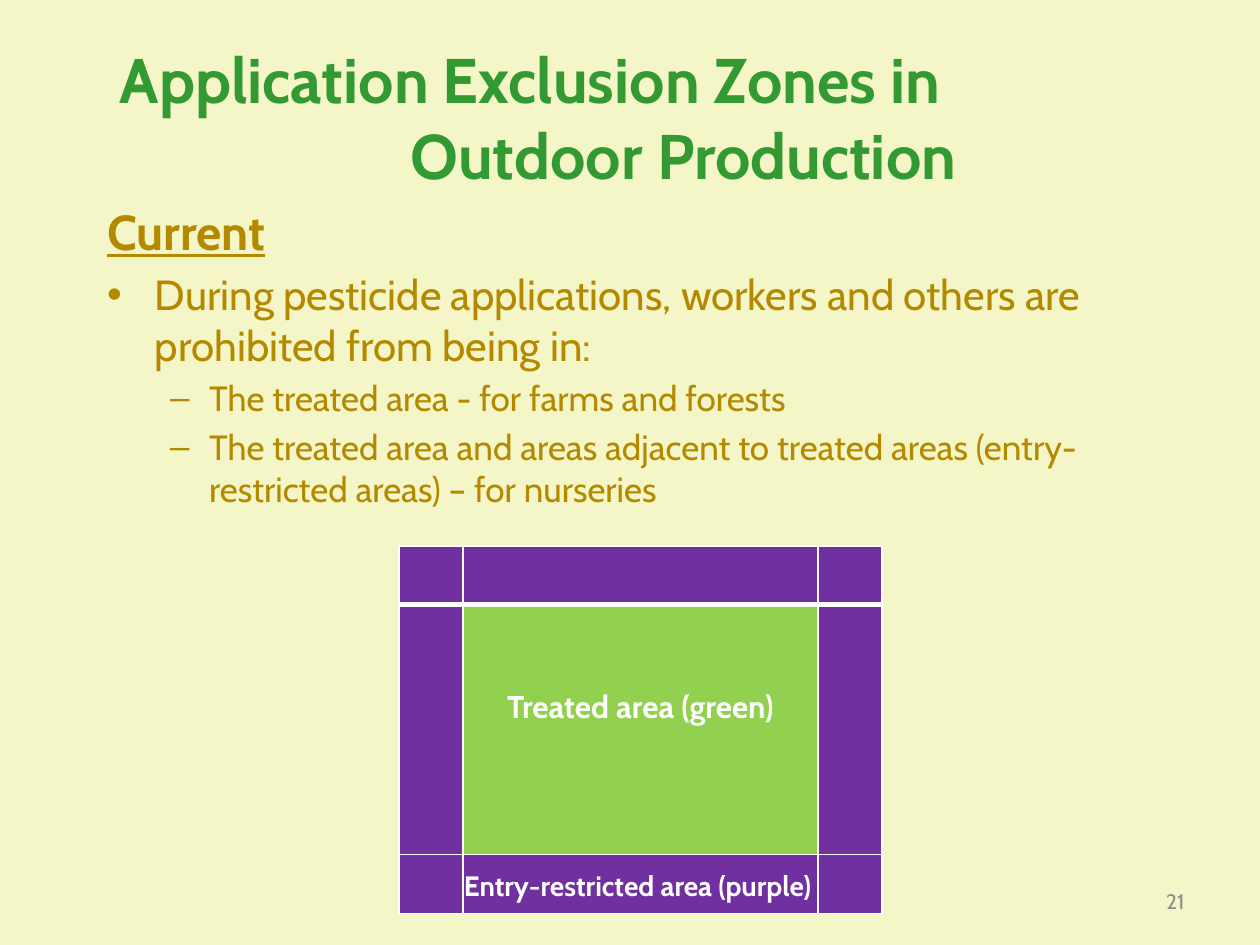
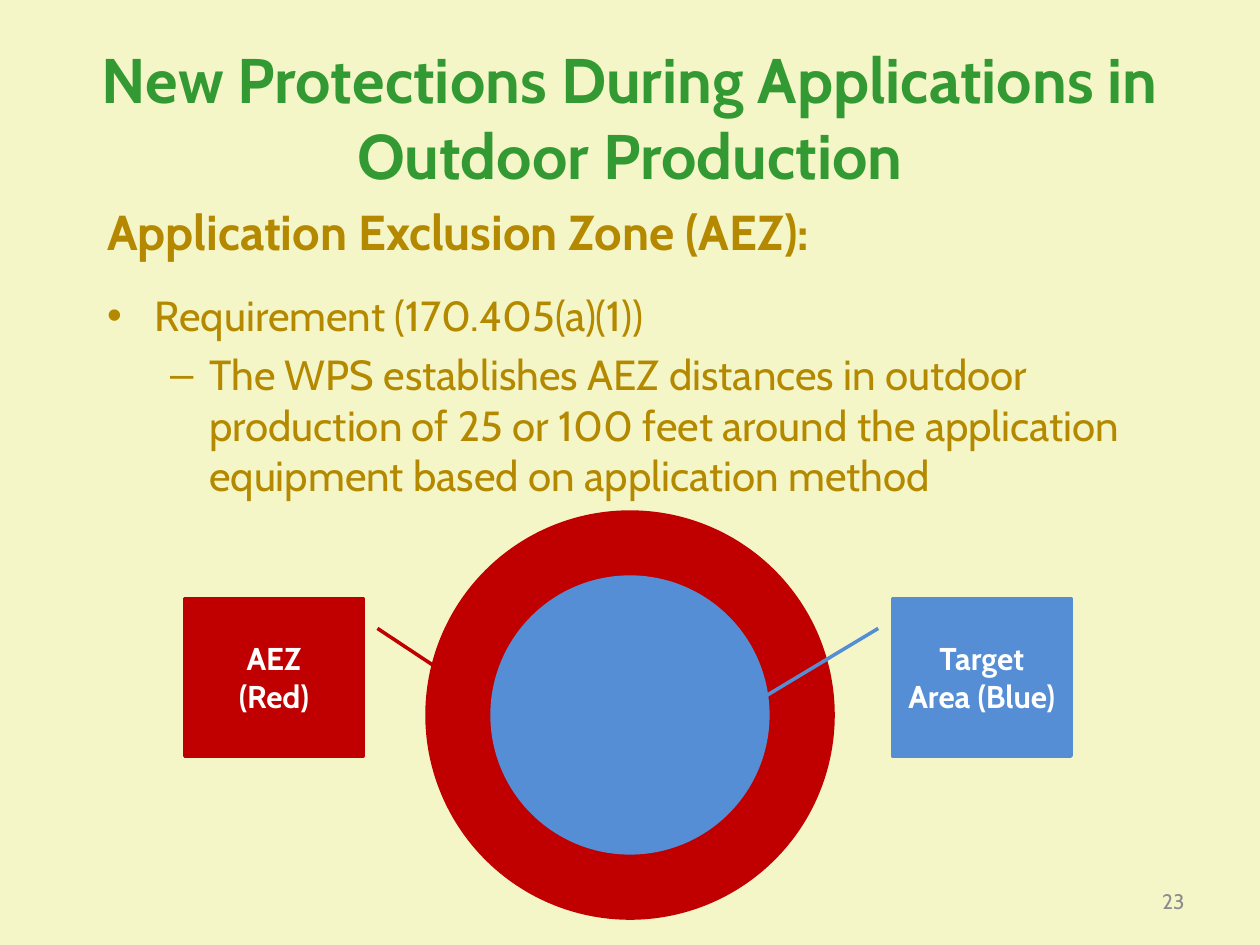
from typing import NamedTuple

from lxml import etree
from pptx import Presentation
from pptx.dml.color import RGBColor
from pptx.enum.shapes import MSO_SHAPE
from pptx.enum.text import MSO_ANCHOR, MSO_AUTO_SIZE, PP_ALIGN
from pptx.oxml.ns import qn
from pptx.util import Emu, Inches, Pt

LEFT, CENTER, RIGHT = PP_ALIGN.LEFT, PP_ALIGN.CENTER, PP_ALIGN.RIGHT
TOP, MIDDLE = MSO_ANCHOR.TOP, MSO_ANCHOR.MIDDLE
ELLIPSE, CALLOUT = MSO_SHAPE.OVAL, MSO_SHAPE.LINE_CALLOUT_1
NO_AUTOFIT = MSO_AUTO_SIZE.NONE

FONT = "Cabin"
COLORS = {
    "background": "F4F6C7",
    "title": "339933",
    "body": "B48900",
    "number": "8C8C8C",
    "white": "FFFFFF",
    "restricted": "7030A0",
    "treated": "92D050",
    "exclusion": "C00000",
    "target": "558ED5",
}

# The page is a grid of 120 columns by 90 rows
PAGE_WIDTH, PAGE_HEIGHT = Inches(10), Inches(7.5)
COLUMN, ROW = PAGE_WIDTH / 120, PAGE_HEIGHT / 90


class Frame(NamedTuple):
    """A place on the grid, in columns and rows."""
    column: float
    row: float
    columns: float
    rows: float

    def lengths(self) -> tuple:
        return (Emu(int(self.column * COLUMN)), Emu(int(self.row * ROW)),
                Emu(int(self.columns * COLUMN)), Emu(int(self.rows * ROW)))


class Level(NamedTuple):
    """Bullet and indents, in inches, of one kind of body paragraph."""
    bullet: str
    margin: float
    indent: float


class Item(NamedTuple):
    text: str
    level: Level
    size: int
    bold: bool = False
    underline: bool = False
    after: float = 0


class Callout(NamedTuple):
    lines: tuple
    column: float
    color: str
    pointer: tuple


TITLE_FRAME = Frame(0, 3.6, 120, 15)
BODY_FRAME = Frame(9, 18.6, 102, 68.4)
NUMBER_FRAME = Frame(86, 83.4, 28, 4.8)

HEADING = Level("", 0, 0)
POINT = Level("•", 0.38, -0.38)
SUBPOINT = Level("–", 0.81, -0.31)


def color_of(name: str) -> RGBColor:
    return RGBColor.from_string(COLORS[name])


def write(para, text: str, *, size: float, color: str, bold: bool = False,
          underline: bool = False, align=LEFT) -> None:
    """Put formatted text into a paragraph."""
    para.alignment = align
    span = para.add_run()
    span.text = text
    span.font.name = FONT
    span.font.size = Pt(size)
    span.font.bold = bold
    span.font.underline = underline
    span.font.color.rgb = color_of(color)


def set_level(para, level: Level) -> None:
    properties = para._p.get_or_add_pPr()
    properties.set("marL", str(Inches(level.margin)))
    properties.set("indent", str(Inches(level.indent)))
    if level.bullet:
        etree.SubElement(properties, qn("a:buChar"), char=level.bullet)
    else:
        etree.SubElement(properties, qn("a:buNone"))


def paragraphs(text_frame, count: int) -> list:
    for _ in range(count - 1):
        text_frame.add_paragraph()
    return list(text_frame.paragraphs)


def place(box, frame: Frame, anchor):
    """Move a placeholder and return its text frame."""
    box.left, box.top, box.width, box.height = frame.lengths()
    box.text_frame.word_wrap = True
    box.text_frame.auto_size = NO_AUTOFIT
    box.text_frame.vertical_anchor = anchor
    return box.text_frame


def add_label(page, text: str, frame: Frame, anchor=TOP, **style) -> None:
    box = page.shapes.add_textbox(*frame.lengths())
    box.text_frame.word_wrap = True
    box.text_frame.vertical_anchor = anchor
    write(box.text_frame.paragraphs[0], text, **style)


def add_page(deck, title: tuple, items: list, number: int, first_line_margin: float = 0):
    """Add a page with title, list and number; a margin sets the first title line left."""
    page = deck.slides.add_slide(deck.slide_layouts[1])
    title_text = place(page.shapes.title, TITLE_FRAME, MIDDLE)
    for para, line in zip(paragraphs(title_text, len(title)), title):
        write(para, line, size=36, color="title", bold=True, align=CENTER)
    if first_line_margin:
        first = title_text.paragraphs[0]
        first.alignment = LEFT
        set_level(first, Level("", first_line_margin, 0))

    body_text = place(page.placeholders[1], BODY_FRAME, TOP)
    for index, (para, item) in enumerate(zip(paragraphs(body_text, len(items)), items)):
        para.level = 1 if item.level is SUBPOINT else 0
        set_level(para, item.level)
        para.space_before = Pt(0.2 * item.size if index else 0)
        para.space_after = Pt(item.after)
        write(para, item.text, size=item.size, color="body",
              bold=item.bold, underline=item.underline)

    add_label(page, str(number), NUMBER_FRAME, MIDDLE,
              size=12, color="number", align=RIGHT)
    return page


def set_borders(cell, **widths: float) -> None:
    """Draw white cell borders; each side is given in points."""
    properties = cell._tc.get_or_add_tcPr()
    for position, side in enumerate("LRTB"):
        line = etree.Element(qn(f"a:ln{side}"), w=str(Pt(widths.get(side, 1))))
        fill = etree.SubElement(line, qn("a:solidFill"))
        etree.SubElement(fill, qn("a:srgbClr"), val=COLORS["white"])
        properties.insert(position, line)


def add_field_plan(page) -> None:
    """Treated area surrounded by the entry-restricted border."""
    columns, rows = (6.1, 33.8, 6.1), (5.6, 23.8, 5.6)
    frame = Frame(38, 52, sum(columns), sum(rows))
    table = page.shapes.add_table(len(rows), len(columns), *frame.lengths()).table
    table.first_row = table.horz_banding = False
    for column, width in zip(table.columns, columns):
        column.width = Emu(int(width * COLUMN))
    for row, height in zip(table.rows, rows):
        row.height = Emu(int(height * ROW))
    for row_index in range(len(rows)):
        for column_index in range(len(columns)):
            cell = table.cell(row_index, column_index)
            treated = (row_index, column_index) == (1, 1)
            cell.fill.solid()
            cell.fill.fore_color.rgb = color_of("treated" if treated else "restricted")
            set_borders(cell, T=3 if row_index == 1 else 1, B=3 if row_index == 0 else 1)
    center = table.cell(1, 1)
    center.margin_top = Inches(0.66)
    write(center.text_frame.paragraphs[0], "Treated area (green)",
          size=18, color="white", bold=True, align=CENTER)
    add_label(page, "Entry-restricted area (purple)", Frame(43, 82.1, 36, 4.4),
              size=16, color="white", bold=True)


def add_filled(page, kind, frame: Frame, color: str):
    shape = page.shapes.add_shape(kind, *frame.lengths())
    shape.shadow.inherit = False
    shape.fill.solid()
    shape.fill.fore_color.rgb = color_of(color)
    shape.line.fill.background()
    return shape


def add_zone_diagram(page) -> None:
    """Two circles on one centre, with a callout for each."""
    middle_column, middle_row = 60, 68.1
    for diameter, color in ((39, "exclusion"), (26.6, "target")):
        frame = Frame(middle_column - diameter / 2, middle_row - diameter / 2,
                      diameter, diameter)
        add_filled(page, ELLIPSE, frame, color)

    # A pointer holds start row, start column, end row, end column as shares of the box
    callouts = (
        Callout(("Target Area (Blue)",), 85, "target", (0.19, -0.08, 0.81, -0.99)),
        Callout(("AEZ", "(Red)"), 17.6, "exclusion", (0.19, 1.08, 0.58, 1.6)),
    )
    for callout in callouts:
        shape = add_filled(page, CALLOUT, Frame(callout.column, 57, 17, 15), callout.color)
        shape.line.color.rgb = color_of(callout.color)
        shape.line.width = Pt(2)
        for index, share in enumerate(callout.pointer):
            shape.adjustments[index] = share
        text_frame = shape.text_frame
        text_frame.word_wrap = True
        text_frame.vertical_anchor = MIDDLE
        for para, line in zip(paragraphs(text_frame, len(callout.lines)), callout.lines):
            write(para, line, size=18, color="white", bold=True, align=CENTER)


def main() -> None:
    deck = Presentation()
    deck.slide_width, deck.slide_height = PAGE_WIDTH, PAGE_HEIGHT
    background = deck.slide_master.background.fill
    background.solid()
    background.fore_color.rgb = color_of("background")

    # Current rule
    current_page = add_page(
        deck, ("Application Exclusion Zones in", "Outdoor Production"), [
            Item("Current", HEADING, 28, bold=True, underline=True),
            Item("During pesticide applications, workers and others are "
                 "prohibited from being in:", POINT, 24),
            Item("The treated area - for farms and forests", SUBPOINT, 20),
            Item("The treated area and areas adjacent to treated areas "
                 "(entry-restricted areas) – for nurseries", SUBPOINT, 20),
        ], 21, first_line_margin=0.85)
    add_field_plan(current_page)

    # New rule
    new_page = add_page(
        deck, ("New Protections During Applications in Outdoor Production",), [
            Item("Application Exclusion Zone (AEZ):", HEADING, 28, bold=True, after=12),
            Item("Requirement (170.405(a)(1))", POINT, 24),
            Item("The WPS establishes AEZ distances in outdoor production of 25 or "
                 "100 feet around the application equipment based on application method",
                 SUBPOINT, 24),
        ], 23)
    add_zone_diagram(new_page)

    deck.save("out.pptx")


if __name__ == "__main__":
    main()
